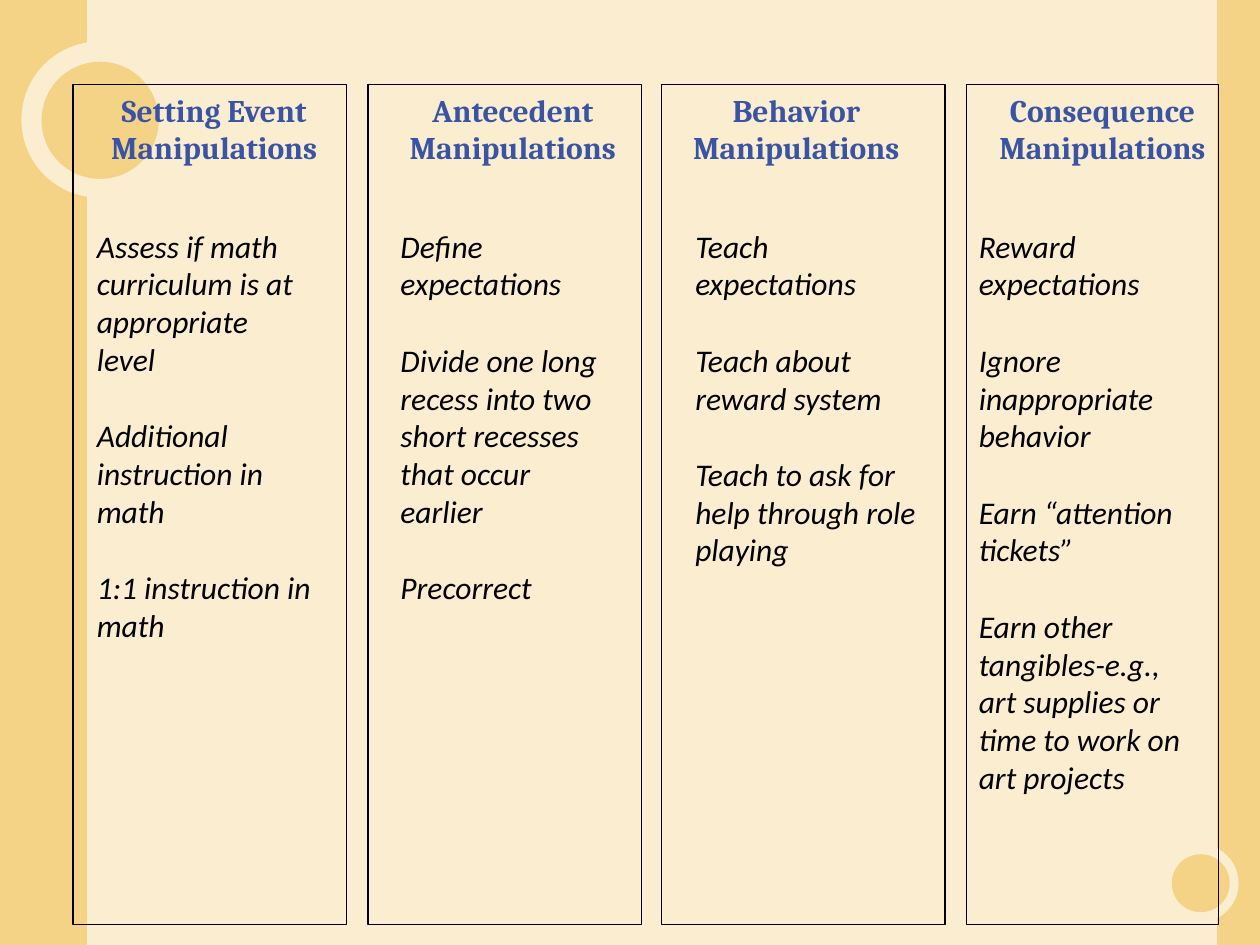
from pptx import Presentation
from pptx.dml.color import RGBColor
from pptx.enum import shapes, text
from pptx.util import Inches, Pt

COLORS = {
    "cream": "FBEDCF",
    "gold": "F4D387",
    "heading": "3A54A5",
    "black": "000000",
}
TOP, HEIGHT = 0.67, 6.67
BODY_TOP = 1.75
LINE_GAP = 22  # one line of body text, in points

# Each item is a list of lines; a gap separates the items.
COLUMNS = [
    {"heading": "Setting Event", "frame": (0.58, 2.17), "heading_left": 0.76,
     "body": (0.67, 1.92, 3.74),
     "items": [["Assess if math", "curriculum is at appropriate", "level"],
               ["Additional instruction in math"],
               ["1:1 instruction in math"]]},
    {"heading": "Antecedent", "frame": (2.92, 2.17), "heading_left": 3.13,
     "body": (3.08, 1.92, 3.43),
     "items": [["Define expectations"],
               ["Divide one long recess into two short recesses that occur earlier"],
               ["Precorrect"]]},
    {"heading": "Behavior", "frame": (5.25, 2.25), "heading_left": 5.38,
     "body": (5.42, 2.08, 2.83),
     "items": [["Teach expectations"],
               ["Teach about reward system"],
               ["Teach to ask for help through role playing"]]},
    {"heading": "Consequence", "frame": (7.67, 2), "heading_left": 7.81,
     "body": (7.67, 1.92, 4.64),
     "items": [["Reward expectations"],
               ["Ignore inappropriate behavior"],
               ["Earn “attention tickets”"],
               ["Earn other tangibles-e.g., art supplies or time to work on art projects"]]},
]


def rgb(name):
    return RGBColor.from_string(COLORS[name])


def add_preset(page, kind, left, top, width, height, fill=None, line=None):
    shape = page.shapes.add_shape(
        kind, Inches(left), Inches(top), Inches(width), Inches(height))
    shape.shadow.inherit = False
    if fill:
        shape.fill.solid()
        shape.fill.fore_color.rgb = rgb(fill)
    else:
        shape.fill.background()
    if line:
        shape.line.color.rgb = rgb(line)
        shape.line.width = Pt(0.75)
    else:
        shape.line.fill.background()


def add_text_box(page, left, top, width, height, wrap):
    box = page.shapes.add_textbox(
        Inches(left), Inches(top), Inches(width), Inches(height))
    frame = box.text_frame
    frame.word_wrap = wrap
    frame.auto_size = text.MSO_AUTO_SIZE.SHAPE_TO_FIT_TEXT
    return frame


def write_para(frame, words, font, color, bold=False, italic=False,
               align=text.PP_ALIGN.LEFT, before=0):
    """Write into the empty first paragraph, or else append a new one."""
    para = frame.paragraphs[0] if not frame.text else frame.add_paragraph()
    para.alignment = align
    para.space_before = Pt(before)
    span = para.add_run()
    span.text = words
    span.font.name = font
    span.font.size = Pt(18)
    span.font.bold = bold
    span.font.italic = italic
    span.font.color.rgb = rgb(color)


def add_background(page):
    page.background.fill.solid()
    page.background.fill.fore_color.rgb = rgb("cream")
    for left, width in ((9.66, 0.34), (0, 0.69)):
        add_preset(page, shapes.MSO_SHAPE.RECTANGLE, left, 0, width, 7.5, fill="gold")
    for left, top, size, fill in ((0.17, 0.33, 1.24, "cream"),
                                  (0.33, 0.49, 0.93, "gold"),
                                  (9.21, 6.7, 0.62, "cream"),
                                  (9.3, 6.78, 0.46, "gold")):
        add_preset(page, shapes.MSO_SHAPE.OVAL, left, top, size, size, fill=fill)


def add_column(page, column):
    left, width = column["frame"]
    add_preset(page, shapes.MSO_SHAPE.RECTANGLE, left, TOP, width, HEIGHT, line="black")

    heading = add_text_box(page, column["heading_left"], TOP, 1.88, 0.7, wrap=False)
    for words in (column["heading"], "Manipulations"):
        write_para(heading, words, "Cambria", "heading", bold=True,
                   align=text.PP_ALIGN.CENTER)

    left, width, height = column["body"]
    body = add_text_box(page, left, BODY_TOP, width, height, wrap=True)
    for item_index, lines in enumerate(column["items"]):
        for line_index, words in enumerate(lines):
            starts_later_item = item_index > 0 and line_index == 0
            write_para(body, words, "Calibri", "black", italic=True,
                       before=LINE_GAP if starts_later_item else 0)


def main():
    deck = Presentation()
    deck.slide_width, deck.slide_height = Inches(10), Inches(7.5)
    page = deck.slides.add_slide(deck.slide_layouts[6])
    add_background(page)
    for column in COLUMNS:
        add_column(page, column)
    deck.save("out.pptx")


if __name__ == "__main__":
    main()
